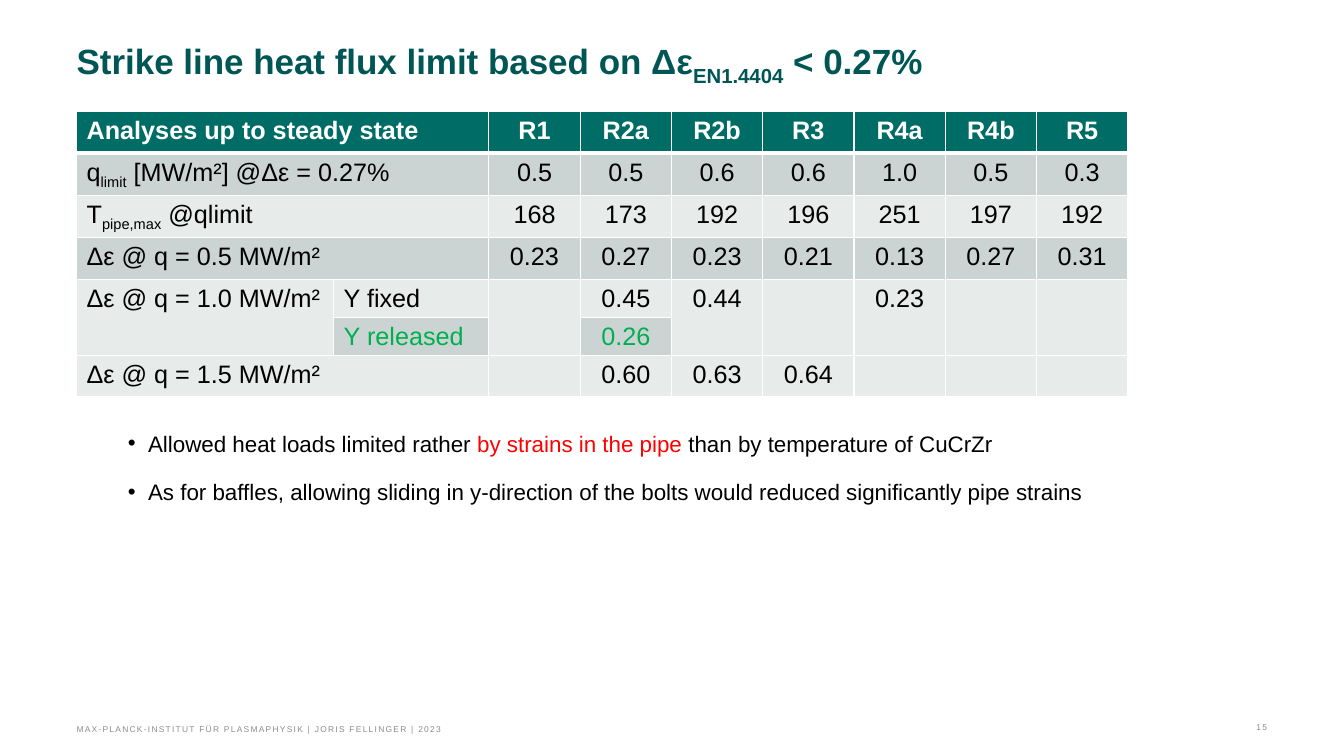
import dataclasses

import lxml.etree
import pptx
import pptx.dml.color
import pptx.enum.text
import pptx.oxml.ns
import pptx.util

Pt = pptx.util.Pt
ALIGN = pptx.enum.text.PP_ALIGN
ANCHOR = pptx.enum.text.MSO_ANCHOR


@dataclasses.dataclass(frozen=True)
class Theme:
    """Colours, font and type sizes of the slide."""
    font: str = "Arial"
    title: str = "005555"
    header: str = "006C66"
    band_dark: str = "CCD4D3"
    band_light: str = "E7EBEA"
    white: str = "FFFFFF"
    text: str = "000000"
    green: str = "00B050"
    red: str = "FF0000"
    grey: str = "8C8C8C"
    title_size: float = 25
    table_size: float = 18
    body_size: float = 16
    footer_size: float = 6


THEME = Theme()
SUB = {"baseline": -25000}

HEADER = ["R1", "R2a", "R2b", "R3", "R4a", "R4b", "R5"]
ROWS = [
    ([("Analyses up to steady state", {})], None, HEADER),
    ([("q", {}), ("limit", SUB), (" [MW/m²] @Δε = 0.27%", {})], None,
     ["0.5", "0.5", "0.6", "0.6", "1.0", "0.5", "0.3"]),
    ([("T", {}), ("pipe,max", SUB), (" @qlimit", {})], None,
     ["168", "173", "192", "196", "251", "197", "192"]),
    ([("Δε @ q = 0.5 MW/m²", {})], None,
     ["0.23", "0.27", "0.23", "0.21", "0.13", "0.27", "0.31"]),
    ([("Δε @ q = 1.0 MW/m²", {})], "Y fixed",
     ["", "0.45", "0.44", "", "0.23", "", ""]),
    ([], "Y released", ["", "0.26", "", "", "", "", ""]),
    ([("Δε @ q = 1.5 MW/m²", {})], None,
     ["", "0.60", "0.63", "0.64", "", "", ""]),
]
FIXED_ROW, RELEASED_ROW = 4, 5
SPLIT_COLS = (1, 3)
DARK_ROWS = (1, 3, RELEASED_ROW)
COL_WIDTHS = [183.6, 110.9] + [65.2] * len(HEADER)
ROW_HEIGHTS = [29.5] * 4 + [27] * 2 + [29.5]

BULLETS = [
    [("Allowed heat loads limited rather ", {}),
     ("by strains in the pipe ", {"color": THEME.red}),
     ("than by temperature of CuCrZr", {})],
    [("As for baffles, allowing sliding in y-direction of the bolts would "
      "reduced significantly pipe strains", {})],
]


def rgb(color):
    """Turn a hex string into a colour."""
    return pptx.dml.color.RGBColor.from_string(color)


def add_text(p, text, size, color=THEME.text, bold=False, baseline=None, spacing=None):
    """Add one formatted run to a paragraph."""
    r = p.add_run()
    r.text = text
    r.font.name = THEME.font
    r.font.size = Pt(size)
    r.font.bold = bold
    r.font.color.rgb = rgb(color)
    for name, value in (("baseline", baseline), ("spc", spacing)):
        if value is not None:
            r.font._element.set(name, str(value))


def add_runs(p, runs, **base):
    """Add several runs that share a base format."""
    for text, extra in runs:
        add_text(p, text, **{**base, **extra})


def place(sp, box, anchor=ANCHOR.TOP):
    """Put a text shape in its box without insets and return its frame."""
    sp.left, sp.top, sp.width, sp.height = (Pt(v) for v in box)
    tf = sp.text_frame
    tf.auto_size = pptx.enum.text.MSO_AUTO_SIZE.NONE
    tf.word_wrap = True
    tf.vertical_anchor = anchor
    tf.margin_left = tf.margin_top = tf.margin_right = tf.margin_bottom = 0
    return tf


def build_title(s, box):
    """Fill the title placeholder."""
    p = place(s.shapes.title, box).paragraphs[0]
    p.alignment = ALIGN.LEFT
    p.line_spacing = Pt(28)
    runs = [("Strike line heat flux limit based on Δε", {}), ("EN1.4404", SUB), (" < 0.27%", {})]
    add_runs(p, runs, size=THEME.title_size, color=THEME.title, bold=True)


def style_cell(cell, fill, bottom):
    """Give a cell white borders and a solid fill."""
    tcPr = cell._tc.get_or_add_tcPr()
    for side, width in (("L", 1), ("R", 1), ("T", 1), ("B", bottom)):
        ln = lxml.etree.SubElement(tcPr, pptx.oxml.ns.qn(f"a:ln{side}"), w=str(Pt(width)))
        solid = lxml.etree.SubElement(ln, pptx.oxml.ns.qn("a:solidFill"))
        lxml.etree.SubElement(solid, pptx.oxml.ns.qn("a:srgbClr"), val=THEME.white)
    cell.fill.solid()
    cell.fill.fore_color.rgb = rgb(fill)


def row_fill(i):
    """Return the fill of a table row."""
    if i == 0:
        return THEME.header
    return THEME.band_dark if i in DARK_ROWS else THEME.band_light


def build_table(s, box):
    """Build the table of heat flux limits."""
    frame = s.shapes.add_table(len(ROWS), len(COL_WIDTHS), *(Pt(v) for v in box))
    table = frame.table
    for col, width in zip(table.columns, COL_WIDTHS):
        col.width = Pt(width)
    for row, height in zip(table.rows, ROW_HEIGHTS):
        row.height = Pt(height)

    for i, (label, case, values) in enumerate(ROWS):
        color = THEME.white if i == 0 else THEME.text
        case_color = THEME.green if i == RELEASED_ROW else color
        base = {"size": THEME.table_size, "bold": i == 0}
        for j in range(len(COL_WIDTHS)):
            style_cell(table.cell(i, j), row_fill(i), 3 if i == 0 else 1)
        add_runs(table.cell(i, 0).text_frame.paragraphs[0], label, color=color, **base)
        if case:
            add_text(table.cell(i, 1).text_frame.paragraphs[0], case, color=case_color, **base)
        elif label:
            table.cell(i, 0).merge(table.cell(i, 1))
        for j, value in enumerate(values, 2):
            if value:
                p = table.cell(i, j).text_frame.paragraphs[0]
                p.alignment = ALIGN.CENTER
                add_text(p, value, color=case_color, **base)

    for j in range(len(COL_WIDTHS)):
        if j not in SPLIT_COLS:
            table.cell(FIXED_ROW, j).merge(table.cell(RELEASED_ROW, j))


def build_bullets(s, box):
    """Fill the body placeholder with the conclusions."""
    tf = place(s.placeholders[1], box)
    for i, runs in enumerate(BULLETS):
        p = tf.add_paragraph() if i else tf.paragraphs[0]
        pPr = p._p.get_or_add_pPr()
        pPr.set("marL", str(Pt(14.4)))
        pPr.set("indent", str(-Pt(14.4)))
        lxml.etree.SubElement(pPr, pptx.oxml.ns.qn("a:buFont"), typeface=THEME.font)
        lxml.etree.SubElement(pPr, pptx.oxml.ns.qn("a:buChar"), char="•")
        p.alignment = ALIGN.LEFT
        p.line_spacing = Pt(23)
        p.space_before = Pt(11.5 if i else 0)
        add_runs(p, runs, size=THEME.body_size)


def build_footer(s, box, text, align):
    """Add one small grey footer text."""
    sp = s.shapes.add_textbox(0, 0, 0, 0)
    p = place(sp, box, ANCHOR.BOTTOM).paragraphs[0]
    p.alignment = align
    add_text(p, text, THEME.footer_size, THEME.grey, spacing=90)


def main():
    """Build the slide and save it."""
    prs = pptx.Presentation()
    prs.slide_width, prs.slide_height = Pt(960), Pt(540)
    s = prs.slides.add_slide(prs.slide_layouts[1])
    build_title(s, (54.7, 34.6, 753.8, 40))
    build_table(s, (54.7, 79.9, sum(COL_WIDTHS), sum(ROW_HEIGHTS)))
    build_bullets(s, (91.4, 303.1, 700, 58.3))
    build_footer(s, (54.7, 511.2, 645, 13), "MAX-PLANCK-INSTITUT FÜR PLASMAPHYSIK | JORIS FELLINGER | 2023", ALIGN.LEFT)
    build_footer(s, (879.1, 511.2, 25.9, 11.5), "15", ALIGN.RIGHT)
    prs.save("out.pptx")


if __name__ == "__main__":
    main()
